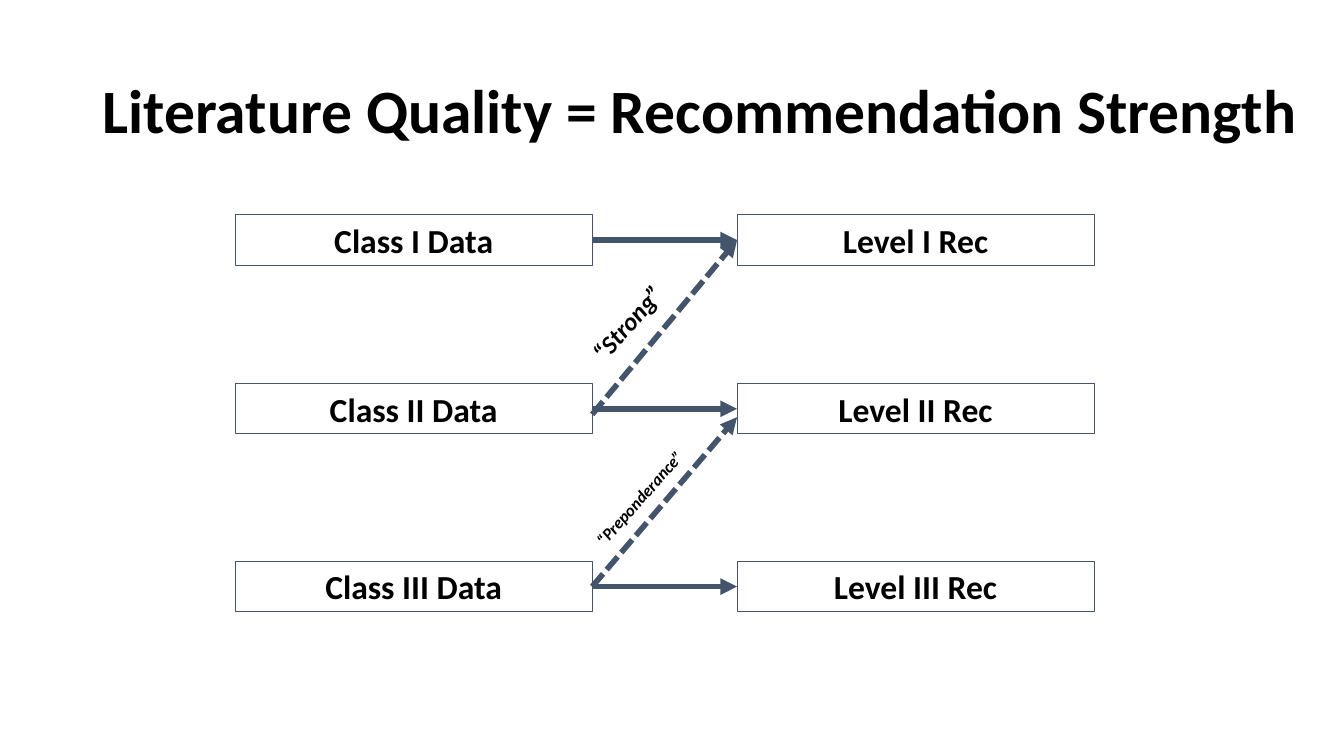
from dataclasses import dataclass

from lxml import etree
from pptx import Presentation
from pptx.dml.color import RGBColor
from pptx.enum.dml import MSO_LINE
from pptx.enum.shapes import MSO_CONNECTOR, MSO_SHAPE
from pptx.enum.text import MSO_ANCHOR, PP_ALIGN
from pptx.oxml.ns import qn
from pptx.util import Pt

RECTANGLE = MSO_SHAPE.RECTANGLE
STRAIGHT = MSO_CONNECTOR.STRAIGHT
DASHED = MSO_LINE.SQUARE_DOT
MIDDLE = MSO_ANCHOR.MIDDLE
LEFT, CENTER = PP_ALIGN.LEFT, PP_ALIGN.CENTER
LEFT_SIDE, RIGHT_SIDE = 1, 3


@dataclass(frozen=True)
class Theme:
    font: str = "Calibri"
    ink: RGBColor = RGBColor(0, 0, 0)
    outline: RGBColor = RGBColor(0x44, 0x54, 0x6A)
    title_size: int = 44
    box_size: int = 24
    strong_size: int = 18
    preponderance_size: int = 12
    box_line: float = 0.75
    arrow_line: float = 4


THEME = Theme()
CLASS_LEFT, LEVEL_LEFT = 168, 526.5
BOX_WIDTH, BOX_HEIGHT = 255, 36
GRADES = [("I", 153.5), ("II", 274), ("III", 401)]


def write(holder, text, size, align=CENTER, italic=False, spacing=1.0):
    frame = holder.text_frame
    frame.word_wrap = True
    frame.vertical_anchor = MIDDLE
    paragraph = frame.paragraphs[0]
    paragraph.alignment = align
    paragraph.line_spacing = spacing
    run = paragraph.add_run()
    run.text = text
    run.font.name = THEME.font
    run.font.size = Pt(size)
    run.font.bold = True
    run.font.italic = italic
    run.font.color.rgb = THEME.ink


def add_label(slide, text, left, top, width, height, rotation=0, **text_format):
    label = slide.shapes.add_textbox(Pt(left), Pt(top), Pt(width), Pt(height))
    label.rotation = rotation
    write(label, text, **text_format)


def add_box(slide, text, left, top):
    box = slide.shapes.add_shape(
        RECTANGLE, Pt(left), Pt(top), Pt(BOX_WIDTH), Pt(BOX_HEIGHT)
    )
    box.shadow.inherit = False
    box.fill.background()
    box.line.color.rgb = THEME.outline
    box.line.width = Pt(THEME.box_line)
    write(box, text, THEME.box_size)
    return box


def add_arrow(slide, source, target, start_drop=0, end_drop=0, dash=None):
    arrow = slide.shapes.add_connector(
        STRAIGHT,
        source.left + source.width,
        source.top + source.height // 2 + Pt(start_drop),
        target.left,
        target.top + target.height // 2 + Pt(end_drop),
    )
    if not start_drop:
        arrow.begin_connect(source, RIGHT_SIDE)
    if not end_drop:
        arrow.end_connect(target, LEFT_SIDE)
    arrow.line.color.rgb = THEME.outline
    arrow.line.width = Pt(THEME.arrow_line)
    if dash:
        arrow.line.dash_style = dash
    etree.SubElement(arrow.line._get_or_add_ln(), qn("a:tailEnd"), type="triangle")
    etree.SubElement(arrow._element.spPr, qn("a:effectLst"))


def main():
    deck = Presentation()
    deck.slide_width, deck.slide_height = Pt(960), Pt(540)
    slide = deck.slides.add_slide(deck.slide_layouts[6])

    add_label(slide, "Literature Quality = Recommendation Strength",
              66.25, 29, 885.5, 104.5,
              size=THEME.title_size, align=LEFT, spacing=0.9)

    classes = [add_box(slide, f"Class {grade} Data", CLASS_LEFT, top)
               for grade, top in GRADES]
    levels = [add_box(slide, f"Level {grade} Rec", LEVEL_LEFT, top)
              for grade, top in GRADES]

    for data, recommendation in zip(classes, levels):
        add_arrow(slide, data, recommendation)
    add_arrow(slide, classes[1], levels[0], start_drop=4, dash=DASHED)
    add_arrow(slide, classes[2], levels[1], end_drop=6, dash=DASHED)

    add_label(slide, "“Strong”", 384, 216, 128, 29, rotation=311.8,
              size=THEME.strong_size, italic=True)
    add_label(slide, "“Preponderance”", 384.5, 345, 144.5, 21.5, rotation=311.8,
              size=THEME.preponderance_size, italic=True)

    deck.save("out.pptx")


if __name__ == "__main__":
    main()
